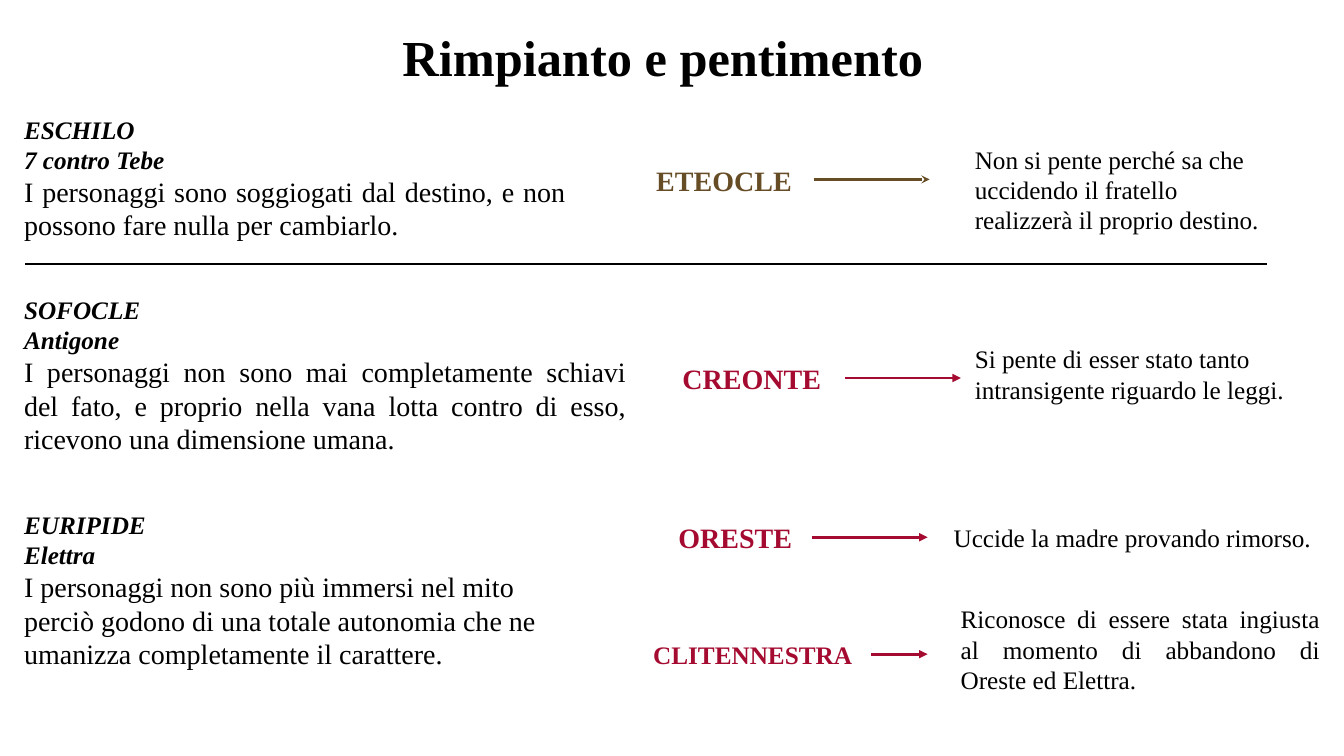
from lxml.etree import SubElement
from pptx import Presentation
from pptx.dml.color import RGBColor
from pptx.enum.shapes import MSO_CONNECTOR
from pptx.enum.text import MSO_ANCHOR, MSO_AUTO_SIZE, PP_ALIGN
from pptx.oxml.ns import qn
from pptx.util import Inches, Pt

COLOURS = {"black": "000000", "brown": "674D26", "crimson": "A50B30"}
FONT = "Times New Roman"
LEFT_MARGIN = 0.14

# Author, work, description, top, width, height, heading and body alignment
AUTHORS = [
    ("ESCHILO", "7 contro Tebe",
     "I personaggi sono soggiogati dal destino, e non possono fare nulla per cambiarlo.",
     1.08, 5.57, 1.68, PP_ALIGN.LEFT, PP_ALIGN.JUSTIFY),
    ("SOFOCLE", "Antigone",
     "I personaggi non sono mai completamente schiavi del fato, e proprio nella vana "
     "lotta contro di esso, ricevono una dimensione umana.",
     2.87, 6.17, 1.72, PP_ALIGN.JUSTIFY, PP_ALIGN.JUSTIFY),
    ("EURIPIDE", "Elettra",
     "I personaggi non sono più immersi nel mito perciò godono di una totale autonomia "
     "che ne umanizza completamente il carattere.",
     5, 5.43, 1.72, PP_ALIGN.LEFT, PP_ALIGN.LEFT),
]

# Name, text size, colour, box
CHARACTERS = [
    ("ETEOCLE", 20, "brown", (6.41, 1.57, 2.46, 0.44)),
    ("CREONTE", 20, "crimson", (6.67, 3.54, 2.46, 0.44)),
    ("ORESTE", 20, "crimson", (6.63, 5.11, 2.46, 0.44)),
    ("CLITENNESTRA", 18, "crimson", (6.38, 6.29, 2.52, 0.4)),
]

# Text, box, alignment
OUTCOMES = [
    ("Non si pente perché sa che uccidendo il fratello realizzerà il proprio destino.",
     (9.57, 1.38, 3.16, 1.01), PP_ALIGN.LEFT),
    ("Si pente di esser stato tanto intransigente riguardo le leggi.",
     (9.57, 3.36, 3.76, 0.71), PP_ALIGN.LEFT),
    ("Uccide la madre provando rimorso.", (9.36, 5.13, 3.97, 0.4), PP_ALIGN.LEFT),
    ("Riconosce di essere stata ingiusta al momento di abbandono di Oreste ed Elettra.",
     (9.43, 5.94, 3.76, 1.02), PP_ALIGN.JUSTIFY),
]

# Start, end, height on the slide, colour, line width, arrowhead
LINES = [
    (8.07, 9.22, 1.78, "brown", 1.75, "stealth"),
    (8.38, 9.53, 3.75, "crimson", 2, "triangle"),
    (8.05, 9.2, 5.33, "crimson", 2, "triangle"),
    (8.64, 9.2, 6.49, "crimson", 2, "triangle"),
    (0.25, 12.57, 2.62, "black", 1.75, None),
]


def write_text(paragraph, text, size=18, colour="black", bold=False, italic=False,
               align=PP_ALIGN.LEFT):
    paragraph.alignment = align
    run = paragraph.add_run()
    run.text = text
    run.font.name = FONT
    run.font.size = Pt(size)
    run.font.bold = bold
    run.font.italic = italic
    run.font.color.rgb = RGBColor.from_string(COLOURS[colour])


def add_text_box(slide, box):
    text_frame = slide.shapes.add_textbox(*map(Inches, box)).text_frame
    text_frame.word_wrap = True
    return text_frame


def add_title(slide, text):
    title = slide.shapes.title
    title.left, title.top, title.width, title.height = map(
        Inches, (LEFT_MARGIN, 0.21, 12.87, 0.71))
    title.text_frame.auto_size = MSO_AUTO_SIZE.NONE
    title.text_frame.vertical_anchor = MSO_ANCHOR.TOP
    write_text(title.text_frame.paragraphs[0], text, size=36, bold=True,
               align=PP_ALIGN.CENTER)


def add_author(slide, author, work, description, top, width, height,
               heading_align, body_align):
    text_frame = add_text_box(slide, (LEFT_MARGIN, top, width, height))
    write_text(text_frame.paragraphs[0], author, bold=True, italic=True,
               align=heading_align)
    write_text(text_frame.add_paragraph(), work, bold=True, italic=True,
               align=heading_align)
    write_text(text_frame.add_paragraph(), description, size=20, align=body_align)


def add_line(slide, start, end, height, colour, width, arrowhead):
    connector = slide.shapes.add_connector(
        MSO_CONNECTOR.STRAIGHT, Inches(start), Inches(height), Inches(end), Inches(height))
    connector.line.color.rgb = RGBColor.from_string(COLOURS[colour])
    connector.line.width = Pt(width)
    if arrowhead:
        SubElement(connector.line._get_or_add_ln(), qn("a:tailEnd"), type=arrowhead)
    SubElement(connector._element.spPr, qn("a:effectLst"))


def main():
    presentation = Presentation()
    presentation.slide_width = Inches(13.33)
    presentation.slide_height = Inches(7.5)
    slide = presentation.slides.add_slide(presentation.slide_layouts[5])

    # Title
    add_title(slide, "Rimpianto e pentimento")

    # Authors on the left
    for author in AUTHORS:
        add_author(slide, *author)

    # Characters in the middle
    for name, size, colour, box in CHARACTERS:
        write_text(add_text_box(slide, box).paragraphs[0], name, size=size,
                   colour=colour, bold=True)

    # Outcomes on the right
    for text, box, align in OUTCOMES:
        write_text(add_text_box(slide, box).paragraphs[0], text, align=align)

    # Arrows and divider
    for line in LINES:
        add_line(slide, *line)

    presentation.save("out.pptx")


if __name__ == "__main__":
    main()
